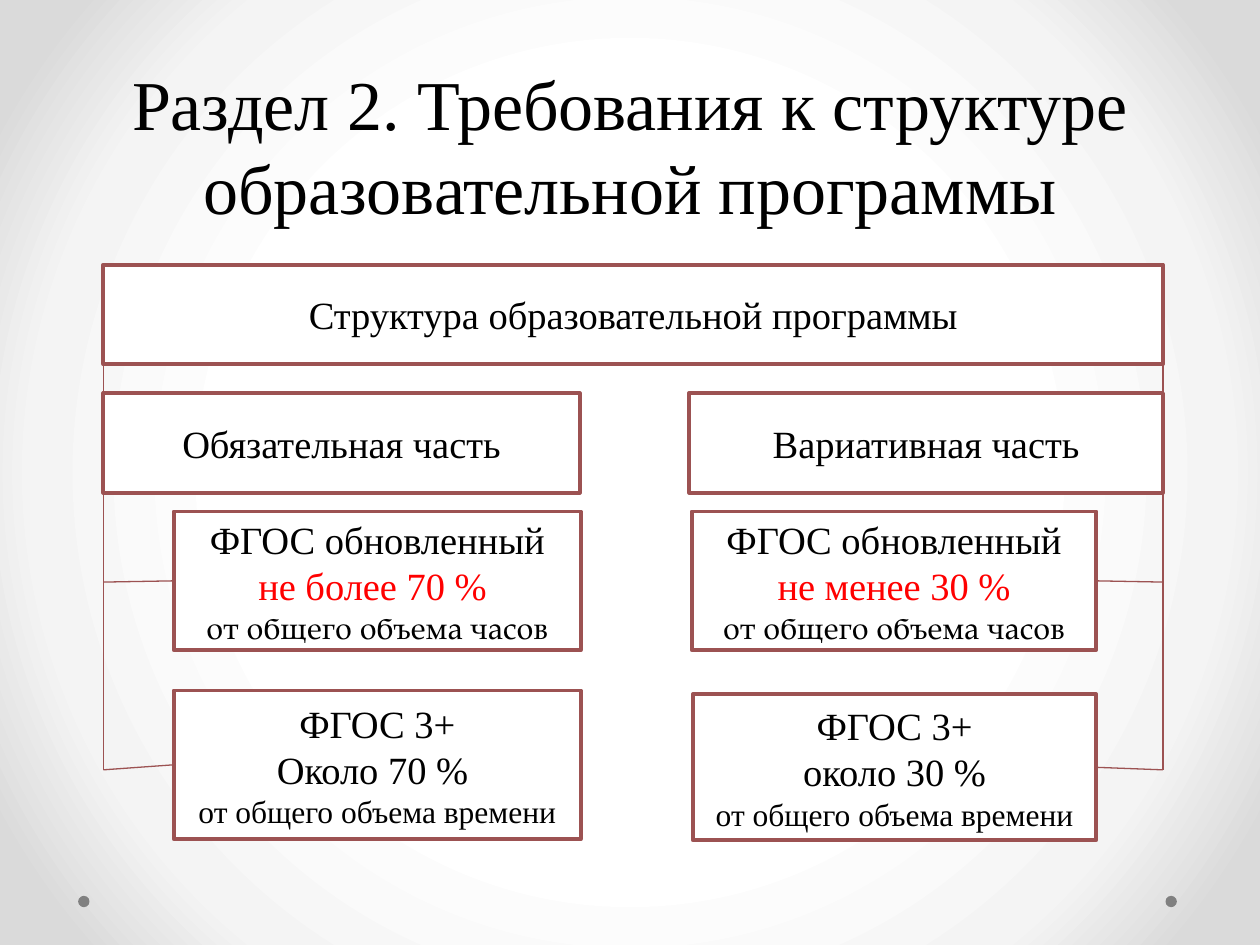
from lxml import etree
from pptx import Presentation
from pptx.dml.color import RGBColor
from pptx.enum.shapes import MSO_CONNECTOR, MSO_SHAPE
from pptx.enum.text import MSO_ANCHOR, PP_ALIGN
from pptx.oxml import parse_xml
from pptx.oxml.ns import nsdecls, qn
from pptx.util import Inches, Pt

BLACK = RGBColor(0x00, 0x00, 0x00)
WHITE = RGBColor(0xFF, 0xFF, 0xFF)
RED = RGBColor(0xFF, 0x00, 0x00)
MAROON = RGBColor(0x9C, 0x52, 0x52)
GRAY = RGBColor(0x80, 0x80, 0x80)

SERIF = "Times New Roman"
PAGELLA = "TeX Gyre Pagella"

# Outer edges of the diagram, and its rows as (top, height)
LEFT, RIGHT = 0.82, 9.23
WHOLE_ROW = (2.1, 0.79)
PART_ROW = (3.12, 0.79)
TRUNK_END = 6.11
LEFT_SIDE, RIGHT_SIDE = 1, 3  # connection sites of a rectangle


def set_background(slide):
    """Radial gradient from a white centre to gray corners."""
    stops = "".join(
        f'<a:gs pos="{share * 1000}"><a:srgbClr val="{color}"/></a:gs>'
        for share, color in ((50, "FFFFFF"), (76, "F4F4F4"), (92, "DADADA")))
    background = parse_xml(
        f'<p:bg {nsdecls("p", "a")}><p:bgPr><a:gradFill rotWithShape="1">'
        f'<a:gsLst>{stops}</a:gsLst><a:path path="circle">'
        '<a:fillToRect l="50000" t="50000" r="50000" b="50000"/></a:path>'
        '</a:gradFill><a:effectLst/></p:bgPr></p:bg>')
    slide.element.cSld.insert(0, background)


def add_dot(slide, left):
    dot = slide.shapes.add_shape(MSO_SHAPE.OVAL, Inches(left), Inches(7.11),
                                 Inches(0.09), Inches(0.09))
    dot.shadow.inherit = False
    dot.fill.solid()
    dot.fill.fore_color.rgb = GRAY
    dot.line.fill.background()


def set_title(slide, text):
    title = slide.shapes.title
    title.left, title.top = Inches(0.5), Inches(0.29)
    title.width, title.height = Inches(9), Inches(1.57)
    title.text_frame.text = text
    title.text_frame.vertical_anchor = MSO_ANCHOR.BOTTOM
    style_paragraph(title.text_frame.paragraphs[0], 40)


def style_paragraph(paragraph, size, color=BLACK, font_name=SERIF):
    paragraph.alignment = PP_ALIGN.CENTER
    paragraph.font.size = Pt(size)
    paragraph.font.name = font_name
    paragraph.font.color.rgb = color


def add_box(slide, left, width, row, *lines):
    """Framed box; each line is its text, then any size, colour and font."""
    top, height = row
    box = slide.shapes.add_shape(MSO_SHAPE.RECTANGLE, Inches(left), Inches(top),
                                 Inches(width), Inches(height))
    box.shadow.inherit = False
    box.fill.solid()
    box.fill.fore_color.rgb = WHITE
    box.line.color.rgb = MAROON
    box.line.width = Pt(2.25)
    frame = box.text_frame
    frame.word_wrap = True
    frame.vertical_anchor = MSO_ANCHOR.MIDDLE
    frame.text = "\n".join(text for text, *_ in lines)
    for paragraph, (_, *style) in zip(frame.paragraphs, lines):
        style_paragraph(paragraph, *(style or [22]))
    return box


def add_line(slide, x, top, end_x, bottom):
    line = slide.shapes.add_connector(MSO_CONNECTOR.STRAIGHT, Inches(x), Inches(top),
                                      Inches(end_x), Inches(bottom))
    line.line.color.rgb = MAROON
    line.line.width = Pt(0.75)
    etree.SubElement(line._element.spPr, qn("a:effectLst"))
    return line


def add_branches(slide, edge, boxes, side):
    """Vertical trunk along an outer edge, with a branch to each box."""
    add_line(slide, edge, sum(WHOLE_ROW), edge, PART_ROW[0])
    add_line(slide, edge, sum(PART_ROW), edge, TRUNK_END)
    for box, y in zip(boxes, (4.62, TRUNK_END)):
        branch = add_line(slide, edge, y, edge, y)
        branch.end_connect(box, side)


def main():
    prs = Presentation()
    prs.slide_width, prs.slide_height = Inches(10), Inches(7.5)
    slide = prs.slides.add_slide(prs.slide_layouts[5])
    set_background(slide)
    for left in (9.25, 0.62):
        add_dot(slide, left)
    set_title(slide, "Раздел 2. Требования к структуре образовательной программы")

    # The whole programme and its two parts
    add_box(slide, LEFT, RIGHT - LEFT, WHOLE_ROW,
            ("Структура образовательной программы",))
    add_box(slide, LEFT, 3.78, PART_ROW, ("Обязательная часть",))
    add_box(slide, 5.47, RIGHT - 5.47, PART_ROW, ("Вариативная часть",))

    # Shares under the updated and the earlier standard
    updated = ("ФГОС обновленный", 22)
    earlier = ("ФГОС 3+", 22)
    of_hours = ("от общего объема часов", 18, BLACK, PAGELLA)
    of_time = ("от общего объема времени", 18)
    required = [
        add_box(slide, 1.38, 3.23, (4.06, 1.1),
                updated, ("не более 70 % ", 22, RED), of_hours),
        add_box(slide, 1.38, 3.23, (5.48, 1.18),
                earlier, ("Около 70 % ", 22), of_time),
    ]
    variable = [
        add_box(slide, 5.49, 3.21, (4.06, 1.1),
                updated, ("не менее 30 %", 22, RED), of_hours),
        add_box(slide, 5.5, 3.2, (5.51, 1.16),
                earlier, ("около 30 %", 22), of_time),
    ]
    add_branches(slide, LEFT, required, LEFT_SIDE)
    add_branches(slide, RIGHT, variable, RIGHT_SIDE)

    prs.save("out.pptx")


if __name__ == "__main__":
    main()
